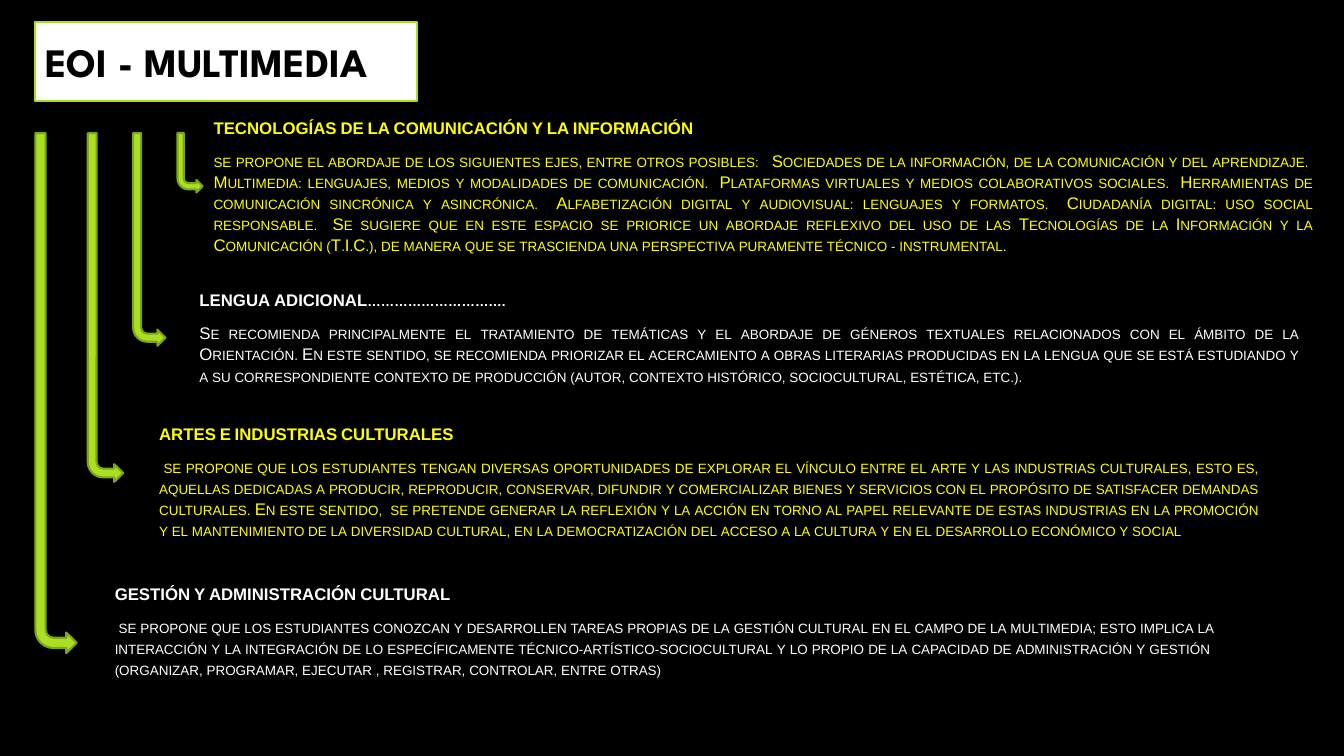
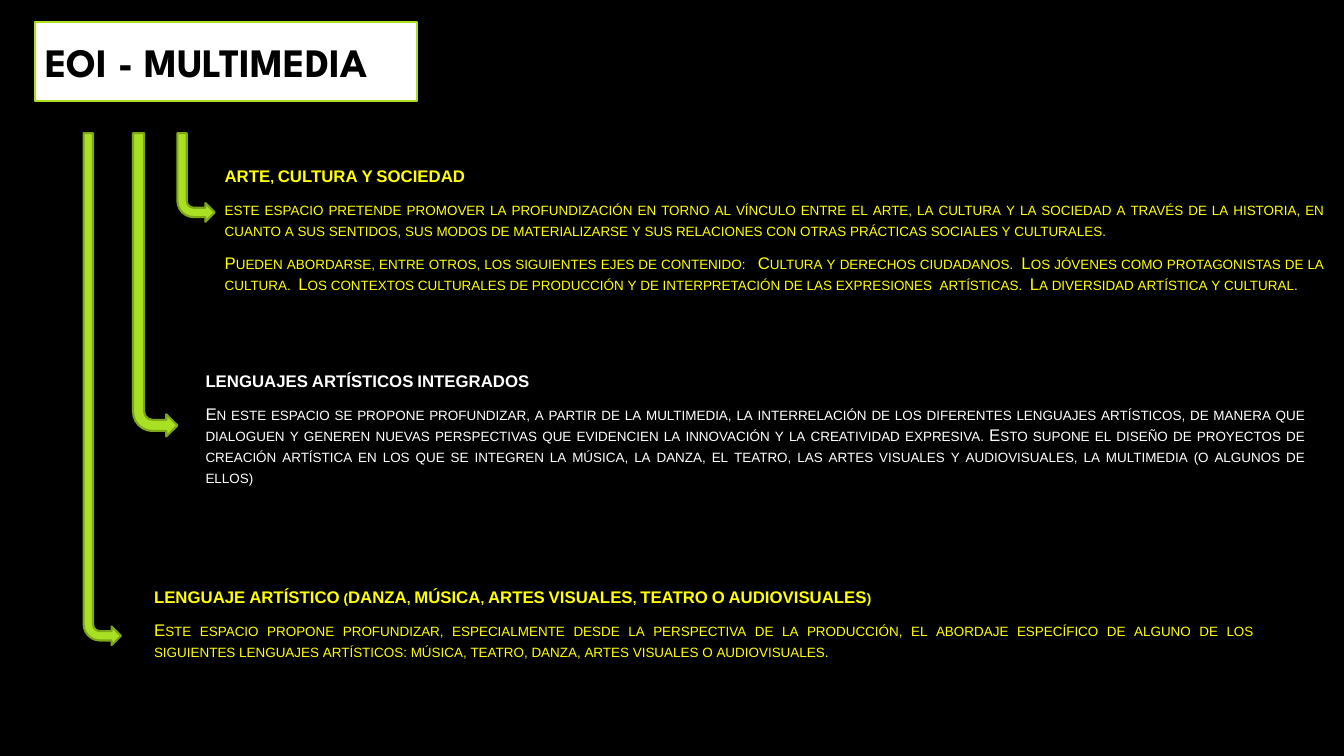
from dataclasses import dataclass

from pptx import Presentation
from pptx.dml.color import RGBColor
from pptx.enum.shapes import MSO_SHAPE as Preset
from pptx.enum.text import MSO_ANCHOR as Anchor, PP_ALIGN as Align
from pptx.slide import Slide
from pptx.util import Inches, Pt

# Shared look
BLACK = RGBColor(0x00, 0x00, 0x00)
WHITE = RGBColor(0xFF, 0xFF, 0xFF)
YELLOW = RGBColor(0xFF, 0xFF, 0x00)
LIME = RGBColor(0xA9, 0xE0, 0x23)
DARK_LIME = RGBColor(0x7D, 0xA6, 0x1A)
TOPIC_COLOURS = (YELLOW, WHITE)

TITLE = "EOI - MULTIMEDIA"
TITLE_FONT = {"name": "League Spartan", "size": Pt(28.8), "bold": True}
TOPIC_FONT = {"name": "Arial", "size": Pt(12)}
TOPIC_PARA = {"alignment": Align.JUSTIFY, "space_after": Pt(6), "line_spacing": 1.05}
TOPIC_WIDTH = 11.1
ARROW_TOP = 1.32


@dataclass(frozen=True)
class Arrow:
    left: float
    width: float
    height: float


@dataclass(frozen=True)
class Topic:
    left: float
    top: float
    height: float
    arrow: Arrow
    heading: str
    body: tuple[str, ...]


PAGES: tuple[tuple[Topic, ...], ...] = (
    (
        Topic(2.02, 1.15, 1.39, Arrow(1.76, 0.25, 0.59),
              "TECNOLOGÍAS DE LA COMUNICACIÓN Y LA INFORMACIÓN",
              ("se propone el abordaje de los siguientes ejes, entre otros posibles:   "
               "Sociedades de la información, de la comunicación y del aprendizaje.  "
               "Multimedia: lenguajes, medios y modalidades de comunicación.  "
               "Plataformas virtuales y medios colaborativos sociales.  "
               "Herramientas de comunicación sincrónica y asincrónica.  "
               "Alfabetización digital y audiovisual: lenguajes y formatos.  "
               "Ciudadanía digital: uso social responsable.  "
               "Se sugiere que en este espacio se priorice un abordaje reflexivo del uso "
               "de las Tecnologías de la Información y la Comunicación (T.I.C.), de manera "
               "que se trascienda una perspectiva puramente técnico - instrumental.",)),
        Topic(1.88, 2.69, 1.31, Arrow(1.32, 0.32, 2.11),
              "LENGUA ADICIONAL………………………….",
              ("Se recomienda principalmente el tratamiento de temáticas y el abordaje de "
               "géneros textuales relacionados con el ámbito de la Orientación. En este "
               "sentido, se recomienda priorizar el acercamiento a obras literarias "
               "producidas en la lengua que se está estudiando y a su correspondiente "
               "contexto de producción (autor, contexto histórico, sociocultural, "
               "estética, etc.).",)),
        Topic(1.48, 4.12, 1.31, Arrow(0.87, 0.35, 3.46),
              "ARTES E INDUSTRIAS CULTURALES",
              (" se propone que los estudiantes tengan diversas oportunidades de explorar "
               "el vínculo entre el arte y las industrias culturales, esto es, aquellas "
               "dedicadas a producir, reproducir, conservar, difundir y comercializar "
               "bienes y servicios con el propósito de satisfacer demandas culturales. En "
               "este sentido,  se pretende generar la reflexión y la acción en torno al "
               "papel relevante de estas industrias en la promoción y el mantenimiento de "
               "la diversidad cultural, en la democratización del acceso a la cultura y en "
               "el desarrollo económico y social",)),
        Topic(1.04, 5.6, 1.31, Arrow(0.35, 0.41, 5.16),
              "GESTIÓN Y ADMINISTRACIÓN CULTURAL",
              (" se propone que los estudiantes conozcan y desarrollen tareas propias de "
               "la gestión cultural en el campo de la multimedia; esto implica la "
               "interacción y la integración de lo específicamente "
               "técnico-artístico-sociocultural y lo propio de la capacidad de "
               "administración y gestión  (organizar, programar, ejecutar , registrar, "
               "controlar, entre otras)",)),
    ),
    (
        Topic(2.13, 1.58, 1.39, Arrow(1.76, 0.37, 0.88),
              "ARTE, CULTURA Y SOCIEDAD",
              ("este espacio pretende promover la profundización en torno al vínculo entre "
               "el arte, la cultura y la sociedad a través de la historia, en cuanto a sus "
               "sentidos, sus modos de materializarse y sus relaciones con otras prácticas "
               "sociales y culturales.",
               "Pueden abordarse, entre otros, los siguientes ejes de contenido:   Cultura "
               "y derechos ciudadanos.  Los jóvenes como protagonistas de la cultura.  Los "
               "contextos culturales de producción y de interpretación de las expresiones  "
               "artísticas.  La diversidad artística y cultural.")),
        Topic(1.94, 3.49, 1.52, Arrow(1.32, 0.44, 3.01),
              "LENGUAJES ARTÍSTICOS INTEGRADOS",
              ("En este espacio se propone profundizar, a partir de la multimedia, la "
               "interrelación de los diferentes lenguajes artísticos, de manera que "
               "dialoguen y generen nuevas perspectivas que evidencien la innovación y la "
               "creatividad expresiva. Esto supone el diseño de proyectos de creación "
               "artística en los que se integren la música, la danza, el teatro, las artes "
               "visuales y audiovisuales, la multimedia (o algunos de ellos)",)),
        Topic(1.43, 5.53, 1.31, Arrow(0.83, 0.37, 5.08),
              "LENGUAJE ARTÍSTICO (DANZA, MÚSICA, ARTES VISUALES, TEATRO O AUDIOVISUALES)",
              ("Este espacio propone profundizar, especialmente desde la perspectiva de la "
               "producción, el abordaje específico de alguno de los siguientes lenguajes "
               "artísticos: música, teatro, danza, artes visuales o audiovisuales.",)),
    ),
)


def apply_format(target, values: dict) -> None:
    for name, value in values.items():
        setattr(target, name, value)


def add_filled_shape(page: Slide, preset: Preset, place: tuple[float, ...],
                     fill: RGBColor, line: RGBColor):
    shape = page.shapes.add_shape(preset, *map(Inches, place))
    shape.shadow.inherit = False
    shape.fill.solid()
    shape.fill.fore_color.rgb = fill
    shape.line.color.rgb = line
    shape.line.width = Pt(1.5)
    return shape


def add_title(page: Slide) -> None:
    box = add_filled_shape(page, Preset.RECTANGLE, (0.35, 0.22, 3.79, 0.78), WHITE, LIME)
    box.text_frame.vertical_anchor = Anchor.MIDDLE
    para = box.text_frame.paragraphs[0]
    para.alignment = Align.LEFT
    span = para.add_run()
    span.text = TITLE
    apply_format(span.font, TITLE_FONT)
    span.font.color.rgb = BLACK


def add_arrow(page: Slide, arrow: Arrow) -> None:
    place = (arrow.left, ARROW_TOP, arrow.width, arrow.height)
    shape = add_filled_shape(page, Preset.BENT_ARROW, place, LIME, DARK_LIME)
    # A half turn plus a mirror makes the arrow drop and then point right
    shape.rotation = 180
    shape._element.spPr.xfrm.set("flipH", "1")


def add_topic(page: Slide, topic: Topic, colour: RGBColor) -> None:
    box = page.shapes.add_textbox(Inches(topic.left), Inches(topic.top),
                                  Inches(TOPIC_WIDTH), Inches(topic.height))
    frame = box.text_frame
    apply_format(frame, {"word_wrap": True, "vertical_anchor": Anchor.MIDDLE})
    for index, text in enumerate((topic.heading, *topic.body)):
        para = frame.add_paragraph() if index else frame.paragraphs[0]
        apply_format(para, TOPIC_PARA)
        if index:
            para.space_before = Pt(2.4)
        span = para.add_run()
        span.text = text
        apply_format(span.font, TOPIC_FONT | {"bold": index == 0})
        span.font.color.rgb = colour
        span._r.get_or_add_rPr().set("cap", "small")


def main() -> None:
    deck = Presentation()
    deck.slide_width, deck.slide_height = Inches(13.33), Inches(7.5)
    for topics in PAGES:
        page = deck.slides.add_slide(deck.slide_layouts[6])
        page.background.fill.solid()
        page.background.fill.fore_color.rgb = BLACK
        add_title(page)
        for index, topic in enumerate(topics):
            add_topic(page, topic, TOPIC_COLOURS[index % 2])
            add_arrow(page, topic.arrow)
    deck.save("out.pptx")


if __name__ == "__main__":
    main()
